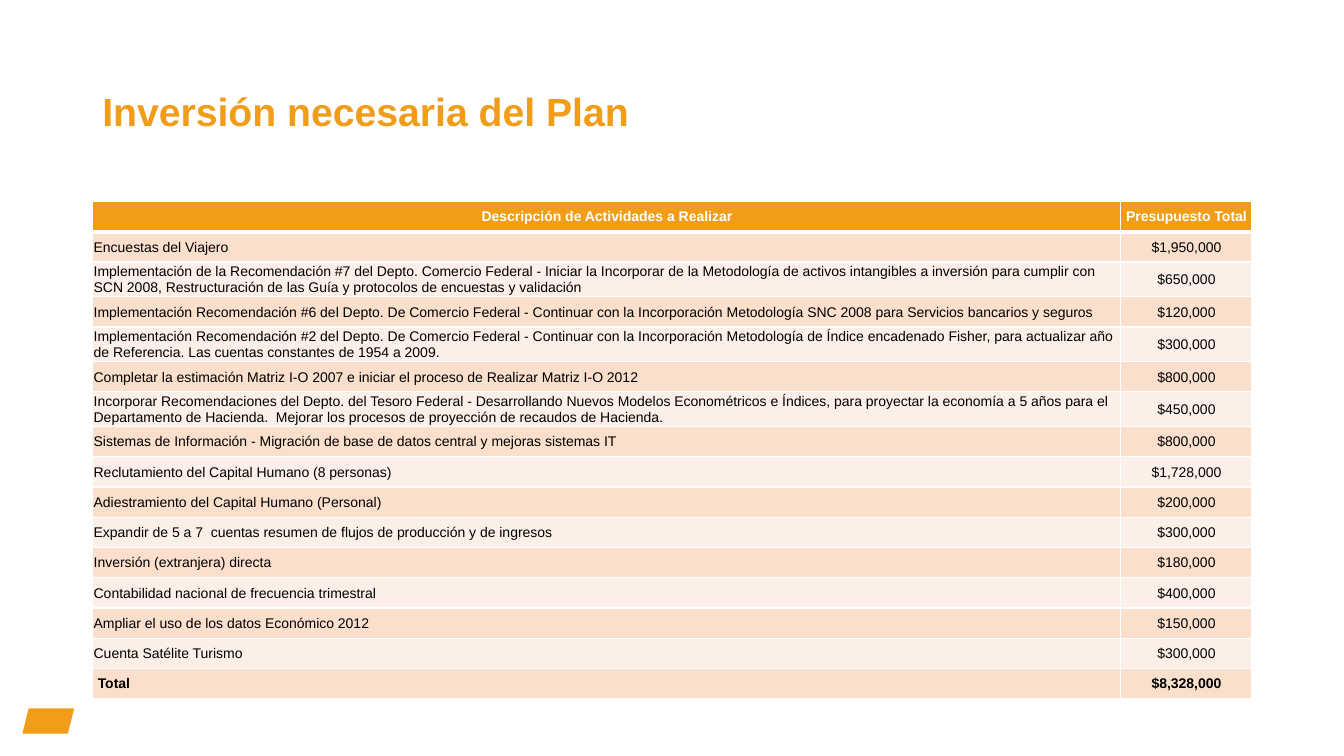
from lxml import etree
from pptx import Presentation
from pptx.dml.color import RGBColor
from pptx.enum.shapes import MSO_SHAPE
from pptx.enum.text import MSO_ANCHOR, PP_ALIGN
from pptx.oxml.ns import qn
from pptx.util import Pt

PARALLELOGRAM = MSO_SHAPE.PARALLELOGRAM
MIDDLE = MSO_ANCHOR.MIDDLE
LEFT, CENTER = PP_ALIGN.LEFT, PP_ALIGN.CENTER

ORANGE, WHITE, BLACK = "F19D19", "FFFFFF", "000000"
BANDS = ["FCEFE8", "FADFCC"]

BUDGET = [
    ("Descripción de Actividades a Realizar", "Presupuesto Total"),
    ("Encuestas del Viajero", "$1,950,000"),
    ("Implementación de la Recomendación #7 del Depto. Comercio Federal - Iniciar la Incorporar de la Metodología de activos intangibles a inversión para cumplir con SCN 2008, Restructuración de las Guía y protocolos de encuestas y validación", "$650,000"),
    ("Implementación Recomendación #6 del Depto. De Comercio Federal - Continuar con la Incorporación Metodología SNC 2008 para Servicios bancarios y seguros", "$120,000"),
    ("Implementación Recomendación #2 del Depto. De Comercio Federal - Continuar con la Incorporación Metodología de Índice encadenado Fisher, para actualizar año de Referencia. Las cuentas constantes de 1954 a 2009.", "$300,000"),
    ("Completar la estimación Matriz I-O 2007 e iniciar el proceso de Realizar Matriz I-O 2012", "$800,000"),
    ("Incorporar Recomendaciones del Depto. del Tesoro Federal - Desarrollando Nuevos Modelos Econométricos e Índices, para proyectar la economía a 5 años para el Departamento de Hacienda.  Mejorar los procesos de proyección de recaudos de Hacienda.", "$450,000"),
    ("Sistemas de Información - Migración de base de datos central y mejoras sistemas IT", "$800,000"),
    ("Reclutamiento del Capital Humano (8 personas)", "$1,728,000"),
    ("Adiestramiento del Capital Humano (Personal)", "$200,000"),
    ("Expandir de 5 a 7  cuentas resumen de flujos de producción y de ingresos", "$300,000"),
    ("Inversión (extranjera) directa", "$180,000"),
    ("Contabilidad nacional de frecuencia trimestral", "$400,000"),
    ("Ampliar el uso de los datos Económico 2012", "$150,000"),
    ("Cuenta Satélite Turismo", "$300,000"),
    ("Total", "$8,328,000"),
]


def color(value):
    return RGBColor.from_string(value)


def write(frame, text, size, ink, bold, align):
    para = frame.paragraphs[0]
    para.text = text
    para.alignment = align
    para.font.name = "Arial"
    para.font.size = Pt(size)
    para.font.bold = bold
    para.font.color.rgb = color(ink)
    return para


deck = Presentation()
deck.slide_width, deck.slide_height = Pt(960), Pt(540)
page = deck.slides.add_slide(deck.slide_layouts[6])

emblem = page.shapes.add_shape(PARALLELOGRAM, Pt(16), Pt(506), Pt(37), Pt(18))
emblem.shadow.inherit = False
emblem.fill.solid()
emblem.fill.fore_color.rgb = color(ORANGE)
emblem.line.fill.background()

title = page.shapes.add_textbox(Pt(66), Pt(28.75), Pt(828), Pt(104.4))
title.text_frame.word_wrap = True
title.text_frame.vertical_anchor = MIDDLE
heading = write(title.text_frame, "Inversión necesaria del Plan", 28, ORANGE, True, LEFT)
heading.line_spacing = 0.9

ROW_HEIGHT = 21.6
last = len(BUDGET) - 1
table = page.shapes.add_table(
    len(BUDGET), 2, Pt(66.24), Pt(144), Pt(828), Pt(ROW_HEIGHT * len(BUDGET))
).table
table.columns[0].width, table.columns[1].width = Pt(734.4), Pt(93.6)

for r, entries in enumerate(BUDGET):
    table.rows[r].height = Pt(ROW_HEIGHT)
    header = r == 0
    for c, text in enumerate(entries):
        cell = table.cell(r, c)
        cell.vertical_anchor = MIDDLE
        cell.margin_left = Pt(3.6 if r == last and c == 0 else 0.7)
        cell.margin_top = cell.margin_right = Pt(0.7)
        cell.margin_bottom = Pt(0)
        write(cell.text_frame, text, 10, WHITE if header else BLACK,
              r in (0, last), CENTER if header or c == 1 else LEFT)

        properties = cell._tc.get_or_add_tcPr()
        widths = {"L": 1, "R": 1, "T": 3 if r == 1 else 1, "B": 3 if header else 1}
        for side, width in widths.items():
            border = etree.SubElement(properties, qn("a:ln" + side), w=str(Pt(width)))
            paint = etree.SubElement(border, qn("a:solidFill"))
            etree.SubElement(paint, qn("a:srgbClr"), val=WHITE)
        cell.fill.solid()
        cell.fill.fore_color.rgb = color(ORANGE if header else BANDS[r % 2])

deck.save("out.pptx")
